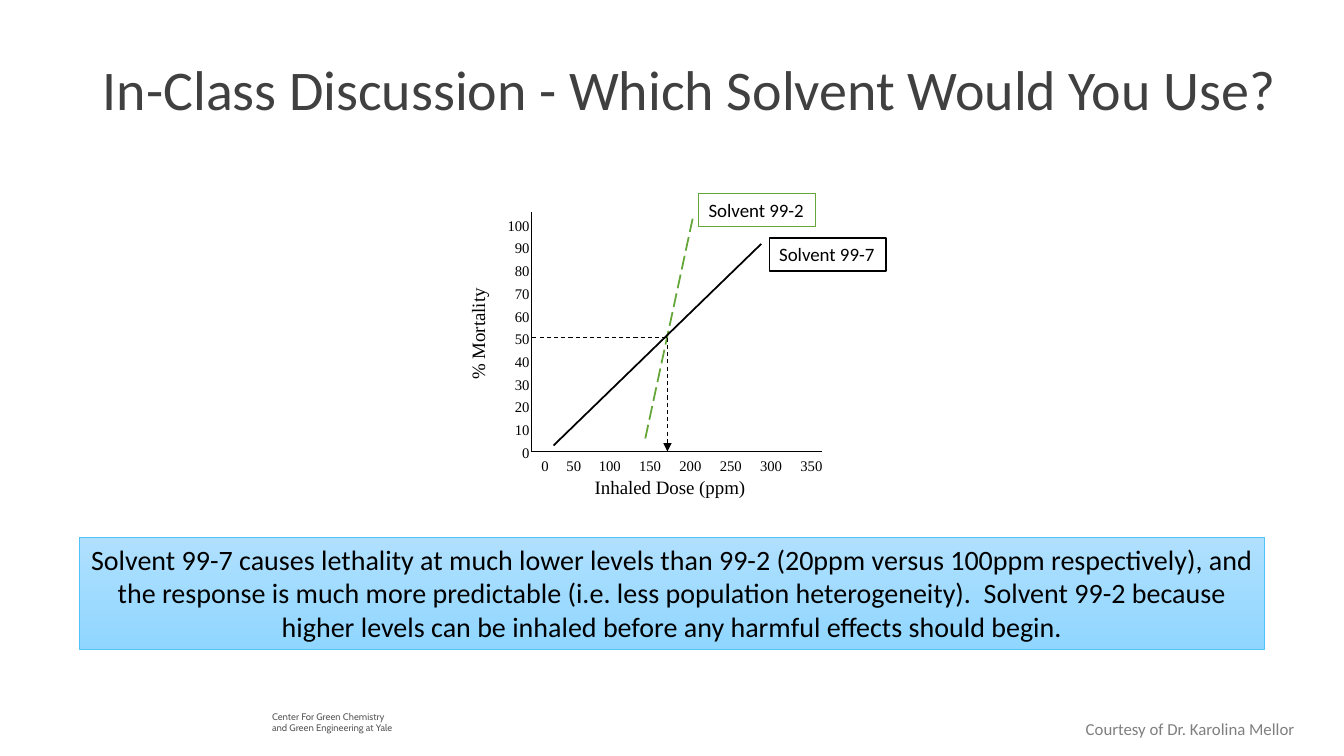
from dataclasses import dataclass

from lxml import etree
from pptx import Presentation
from pptx.dml.color import RGBColor
from pptx.enum import dml, shapes, text
from pptx.oxml import ns
from pptx.util import Inches, Pt

BLACK, GREEN, WHITE = "000000", "63A537", "FFFFFF"
SERIF, SANS = "Times New Roman", "Calibri"
LEFT, CENTER, RIGHT = text.PP_ALIGN.LEFT, text.PP_ALIGN.CENTER, text.PP_ALIGN.RIGHT
Box = tuple[float, float, float, float]


@dataclass
class Label:
    text: str
    box: Box
    size: float
    font: str = SERIF
    color: str = BLACK
    align: text.PP_ALIGN = LEFT
    wrap: bool = False
    rotation: float = 0


@dataclass
class Line:
    start: tuple[float, float]
    end: tuple[float, float]
    color: str = BLACK
    width: float = 0.75
    dash: dml.MSO_LINE | None = None
    arrow: bool = False


@dataclass
class Callout:
    label: Label
    border: str
    border_width: float = 1
    fill: tuple[str, ...] = (WHITE,)


def rgb(value: str) -> RGBColor:
    return RGBColor.from_string(value)


def write(tf, label: Label) -> None:
    tf.text = label.text
    tf.word_wrap = label.wrap
    tf.vertical_anchor = text.MSO_ANCHOR.TOP
    for p in tf.paragraphs:
        p.alignment = label.align
        for r in p.runs:
            r.font.name, r.font.size = label.font, Pt(label.size)
            r.font.color.rgb = rgb(label.color)


def add_label(s, label: Label):
    sp = s.shapes.add_textbox(*map(Inches, label.box))
    sp.rotation = label.rotation
    write(sp.text_frame, label)
    return sp


def add_line(s, line: Line) -> None:
    cx = s.shapes.add_connector(shapes.MSO_CONNECTOR.STRAIGHT,
                                *map(Inches, line.start + line.end))
    cx.line.color.rgb = rgb(line.color)
    cx.line.width = Pt(line.width)
    if line.dash:
        cx.line.dash_style = line.dash
    if line.arrow:
        etree.SubElement(cx.line._get_or_add_ln(), ns.qn("a:tailEnd"), type="triangle")
    etree.SubElement(cx._element.spPr, ns.qn("a:effectLst"))


def add_callout(s, callout: Callout) -> None:
    sp = s.shapes.add_shape(shapes.MSO_SHAPE.RECTANGLE, *map(Inches, callout.label.box))
    sp.shadow.inherit = False
    if len(callout.fill) > 1:
        sp.fill.gradient()
        sp.fill.gradient_angle = 270
        for stop, color in zip(sp.fill.gradient_stops, callout.fill):
            stop.color.rgb = rgb(color)
    else:
        sp.fill.solid()
        sp.fill.fore_color.rgb = rgb(callout.fill[0])
    sp.line.color.rgb = rgb(callout.border)
    sp.line.width = Pt(callout.border_width)
    write(sp.text_frame, callout.label)


def add_dose_ticks(s) -> None:
    """Dose values in one row, spaced by tab stops."""
    doses = "\t".join(str(dose) for dose in range(0, 351, 50))
    sp = add_label(s, Label(doses, (5.27, 4.48, 3.11, 0.28), 10.5, wrap=True))
    tabs = etree.SubElement(sp.text_frame.paragraphs[0]._p.get_or_add_pPr(),
                            ns.qn("a:tabLst"))
    for stop in [0.25] + [0.57 + 0.4 * i for i in range(6)]:
        etree.SubElement(tabs, ns.qn("a:tab"), pos=str(Inches(stop)), algn="l")


def add_title(s) -> None:
    title = s.shapes.title
    title.left, title.top, title.width, title.height = map(Inches, (0.92, 0.19, 12, 1.45))
    write(title.text_frame, Label("In-Class Discussion - Which Solvent Would You Use?",
                                  (0.92, 0.19, 12, 1.45), 40, SANS, "404040", wrap=True))
    title.text_frame.vertical_anchor = text.MSO_ANCHOR.MIDDLE
    title.text_frame.paragraphs[0].line_spacing = 0.9


ANSWER = ("Solvent 99-7 causes lethality at much lower levels than 99-2 "
          "(20ppm versus 100ppm respectively), and the response is much more predictable "
          "(i.e. less population heterogeneity).  Solvent 99-2 because higher levels can be "
          "inhaled before any harmful effects should begin.")
ORIGIN, MEDIAN = (5.27, 4.48), (6.62, 3.35)

LINES = [
    Line(ORIGIN, (5.27, 2.1)),
    Line(ORIGIN, (8.15, 4.48)),
    Line((6.4, 4.35), (6.87, 2.17), GREEN, 1.25, dml.MSO_LINE.LONG_DASH),
    Line((5.28, 3.35), MEDIAN, dash=dml.MSO_LINE.DASH),
    Line(MEDIAN, (6.62, 4.48), dash=dml.MSO_LINE.DASH, arrow=True),
    Line((5.49, 4.42), (7.55, 2.42), width=1.25),
]
MORTALITY_TICKS = [
    Label(str(10 * i), (4.93, 4.35 - 0.225 * i, 0.42, 0.28), 10.5, align=RIGHT, wrap=True)
    for i in range(11)
]
LABELS = MORTALITY_TICKS + [
    Label("Inhaled Dose (ppm)", (5.8, 4.67, 1.72, 0.33), 13.5),
    Label("% Mortality", (4.18, 3.14, 1.12, 0.33), 13.5, rotation=270),
    Label("Center For Green Chemistry\nand Green Engineering at Yale",
          (2.6, 7, 1.86, 0.33), 6.8, "Cabin", "595959", wrap=True),
    Label("Courtesy of Dr. Karolina Mellor", (10.67, 7.08, 2.52, 0.3), 12, SANS,
          "7F7F7F", wrap=True),
]
CALLOUTS = [
    Callout(Label("Solvent 99-7", (7.63, 2.36, 1.16, 0.33), 13.5, SANS), BLACK),
    Callout(Label("Solvent 99-2", (6.93, 1.92, 1.16, 0.33), 13.5, SANS), GREEN),
    Callout(Label(ANSWER, (0.79, 5.33, 11.75, 1.11), 20, SANS, align=CENTER, wrap=True),
            "51C3F9", 0.5, ("B0E0FE", "90D6FF")),
]


def main() -> None:
    prs = Presentation()
    prs.slide_width, prs.slide_height = Inches(13.33), Inches(7.5)
    s = prs.slides.add_slide(prs.slide_layouts.get_by_name("Title Only"))
    add_title(s)
    for line in LINES:
        add_line(s, line)
    for label in LABELS:
        add_label(s, label)
    add_dose_ticks(s)
    for callout in CALLOUTS:
        add_callout(s, callout)
    prs.save("out.pptx")


if __name__ == "__main__":
    main()
